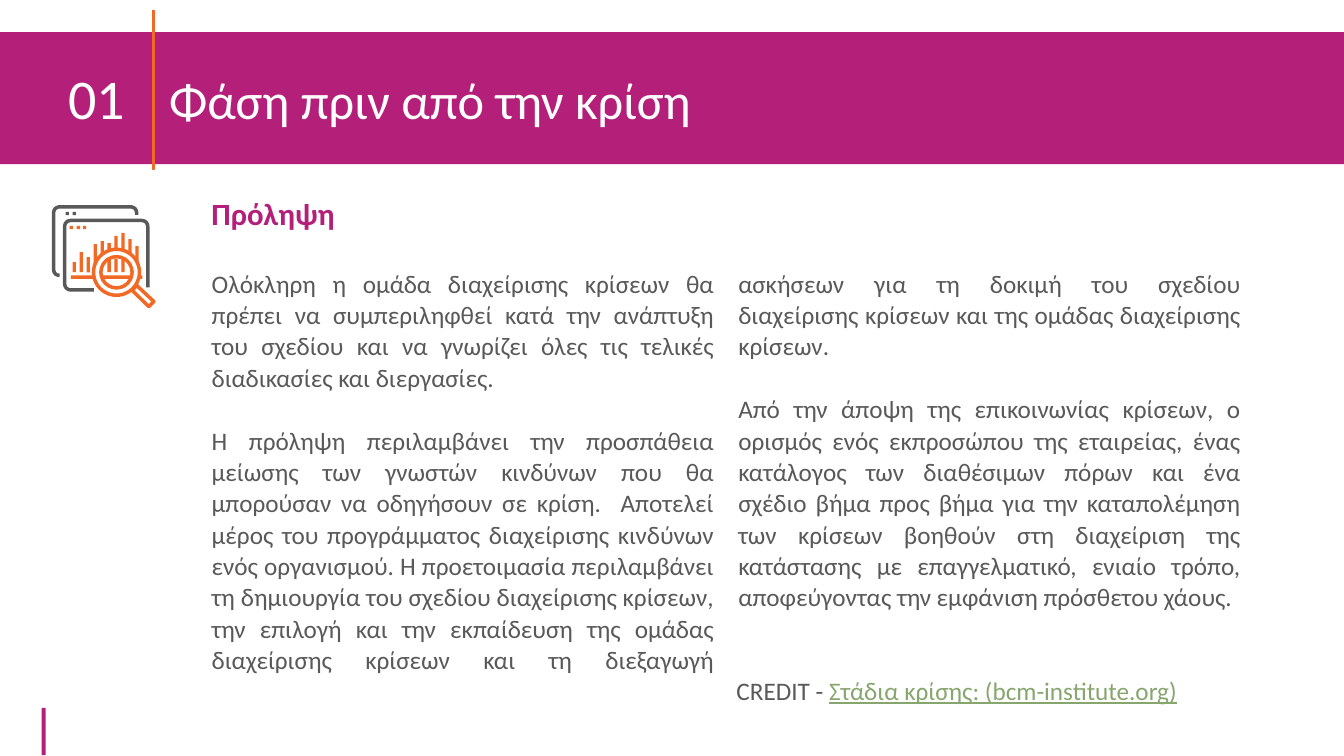
import math

import lxml.etree
import pptx
import pptx.dml.color
import pptx.enum.shapes
import pptx.enum.text
import pptx.oxml.ns
import pptx.util

Cm, Pt = pptx.util.Cm, pptx.util.Pt
KINDS = pptx.enum.shapes.MSO_SHAPE
ALIGN = pptx.enum.text.PP_ALIGN
ANCHOR = pptx.enum.text.MSO_ANCHOR

FONT = "Calibri"
MAGENTA, ORANGE, GREY = "B41F7A", "F16924", "595959"
GREEN, WHITE = "87A66E", "FFFFFF"

PREVENTION = [
    "Ολόκληρη η ομάδα διαχείρισης κρίσεων θα πρέπει να συμπεριληφθεί κατά την "
    "ανάπτυξη του σχεδίου και να γνωρίζει όλες τις τελικές διαδικασίες και "
    "διεργασίες. ",
    "Η πρόληψη περιλαμβάνει την προσπάθεια μείωσης των γνωστών κινδύνων που θα "
    "μπορούσαν να οδηγήσουν σε κρίση.  Αποτελεί μέρος του προγράμματος "
    "διαχείρισης κινδύνων ενός οργανισμού. Η προετοιμασία περιλαμβάνει τη "
    "δημιουργία του σχεδίου διαχείρισης κρίσεων, την επιλογή και την εκπαίδευση "
    "της ομάδας διαχείρισης κρίσεων και τη διεξαγωγή ασκήσεων για τη δοκιμή του "
    "σχεδίου διαχείρισης κρίσεων και της ομάδας διαχείρισης κρίσεων. ",
    "Από την άποψη της επικοινωνίας κρίσεων, ο ορισμός ενός εκπροσώπου της "
    "εταιρείας, ένας κατάλογος των διαθέσιμων πόρων και ένα σχέδιο βήμα προς "
    "βήμα για την καταπολέμηση των κρίσεων βοηθούν στη διαχείριση της "
    "κατάστασης με επαγγελματικό, ενιαίο τρόπο, αποφεύγοντας την εμφάνιση "
    "πρόσθετου χάους.",
]


def rgb(color):
    return pptx.dml.color.RGBColor.from_string(color)


def paint(shape, fill=None, line=None, weight=2.5):
    shape.shadow.inherit = False
    if fill:
        shape.fill.solid()
        shape.fill.fore_color.rgb = rgb(fill)
    else:
        shape.fill.background()
    if line:
        shape.line.color.rgb = rgb(line)
        shape.line.width = Pt(weight)
    else:
        shape.line.fill.background()


def place(shape, left, top, width, height):
    shape.left, shape.top = Cm(left), Cm(top)
    shape.width, shape.height = Cm(width), Cm(height)


def add_bar(shapes, left, top, width, height, color):
    bar = shapes.add_shape(KINDS.RECTANGLE, Cm(left), Cm(top), Cm(width), Cm(height))
    paint(bar, color)
    return bar


def add_span(para, text, size, color, bold=False, underline=False):
    span = para.add_run()
    span.text = text
    font = span.font
    font.name, font.size, font.color.rgb = FONT, Pt(size), rgb(color)
    font.bold, font.underline = bold, underline


def add_label(page, left, top, width, height):
    """Add an empty wrapping text box and return its first paragraph."""
    box = page.shapes.add_textbox(Cm(left), Cm(top), Cm(width), Cm(height))
    box.text_frame.word_wrap = True
    return box.text_frame.paragraphs[0]


def add_child(parent, tag, **attributes):
    return lxml.etree.SubElement(parent, pptx.oxml.ns.qn(tag), attributes)


def fill_title(page, number, text):
    title = page.shapes.title
    title.element.getparent().append(title.element)  # bring above the band
    place(title, 1.47, 0.97, 32.39, 3.18)
    frame = title.text_frame
    frame.auto_size = pptx.enum.text.MSO_AUTO_SIZE.NONE
    frame.vertical_anchor = ANCHOR.MIDDLE
    para = frame.paragraphs[0]
    tabs = add_child(para._p.get_or_add_pPr(), "a:tabLst")
    add_child(tabs, "a:tab", pos=str(Cm(2.54)), algn="l")
    para.alignment, para.line_spacing, para.space_before = ALIGN.LEFT, 0.9, Pt(0)
    add_span(para, number + " \t", 40, WHITE)
    add_span(para, text, 36, WHITE)


def fill_body(page, texts):
    body = page.placeholders[1]
    place(body, 5.08, 6.6, 26.44, 10.82)
    frame = body.text_frame
    frame.auto_size = pptx.enum.text.MSO_AUTO_SIZE.NONE
    frame.vertical_anchor = ANCHOR.TOP
    columns = frame._txBody.bodyPr
    columns.set("numCol", "2")
    columns.set("spcCol", str(Cm(0.61)))
    for index, text in enumerate(texts):
        para = frame.add_paragraph() if index else frame.paragraphs[0]
        settings = para._p.get_or_add_pPr()
        settings.set("marL", "0")
        settings.set("indent", "0")
        add_child(settings, "a:buNone")
        para.alignment, para.line_spacing = ALIGN.JUSTIFY, Pt(22.4)
        para.space_before = Pt(22.4 if index else 0)
        add_span(para, text, 18, GREY)


def round_corners(points, radius=7, steps=6):
    """Replace each inner corner of a polyline by a quadratic curve."""
    result = [points[0]]
    for before, corner, after in zip(points, points[1:], points[2:]):
        start, end = (
            [c + (o - c) * min(1, radius / math.dist(corner, other))
             for c, o in zip(corner, other)]
            for other in (before, after)
        )
        for step in range(steps + 1):
            t = step / steps
            result.append(tuple(
                (1 - t) ** 2 * s + 2 * t * (1 - t) * c + t * t * e
                for s, c, e in zip(start, corner, end)))
    return result + [points[-1]]


def draw_chart_icon(page, left, top, unit=0.0254):
    """Draw two windows with a bar chart under a magnifier, on a grid of units."""
    shapes = page.shapes.add_group_shape().shapes

    def at(x, y):
        return Cm(left + x * unit), Cm(top + y * unit)

    def stroke(points, color, close=False):
        spots = [at(*point) for point in points]
        builder = shapes.build_freeform(*spots[0])
        builder.add_line_segments(spots[1:], close=close)
        paint(builder.convert_to_shape(), None, color)

    def block(x, y, width, height, color=ORANGE):
        add_bar(shapes, left + x * unit, top + y * unit,
                width * unit, height * unit, color)

    def ring(radius):
        center_x, center_y = 64.4, 67
        lens = shapes.add_shape(
            KINDS.OVAL, *at(center_x - radius, center_y - radius),
            Cm(2 * radius * unit), Cm(2 * radius * unit))
        paint(lens, WHITE, ORANGE)

    stroke(round_corners([(8, 70), (2, 70), (2, 2), (84.5, 2), (84.5, 10)]), GREY)
    stroke(round_corners(
        [(42, 84.5), (13, 84.5), (13, 15.5), (95.5, 15.5), (95.5, 82)]), GREY)
    for x in (14, 21):
        block(x, 7, 3.3, 3.3, GREY)
    for x in (18, 25, 31):
        block(x, 21, 3.3, 3.3)

    base = 67
    bar_xs = [21 + 6.9 * index for index in range(10)]
    for x, bar_top in zip(bar_xs, (57, 47, 52, 39, 36, 38, 31, 28, 34, 41)):
        block(x, bar_top, 3.3, base - bar_top)
    block(19, 70, 71, 3.5)

    stroke([(80, 85), (96.5, 101), (101.5, 96), (84.5, 80)], ORANGE, close=True)
    ring(22.8)
    ring(15.5)
    for x in bar_xs[5:8]:
        block(x, 54, 3.3, base - 54)
    block(50, 70, 28, 3.5)


def main():
    deck = pptx.Presentation()
    deck.slide_width, deck.slide_height = Cm(33.87), Cm(19.05)
    page = deck.slides.add_slide(deck.slide_layouts[1])

    add_bar(page.shapes, 1.05, 17.84, 0.1, 1.19, MAGENTA)
    add_bar(page.shapes, 0, 0.81, 33.87, 3.33, MAGENTA)
    fill_title(page, "01", "Φάση πριν από την κρίση")
    divider = add_bar(page.shapes, 3.85, 0.27, 0.05, 3.99, ORANGE)
    paint(divider, ORANGE, ORANGE, 1)

    fill_body(page, PREVENTION)
    draw_chart_icon(page, 1.3, 5.16)

    heading = add_label(page, 5.08, 4.88, 26.44, 1.2)
    heading.line_spacing = 0.9
    add_span(heading, "Πρόληψη", 22, MAGENTA, bold=True)

    credit = add_label(page, 18.31, 16.89, 15.5, 1.02)
    add_span(credit, "CREDIT - ", 18, GREY)
    add_span(credit, "Στάδια κρίσης: (bcm-institute.org)", 18, GREEN, underline=True)

    deck.save("out.pptx")


if __name__ == "__main__":
    main()
